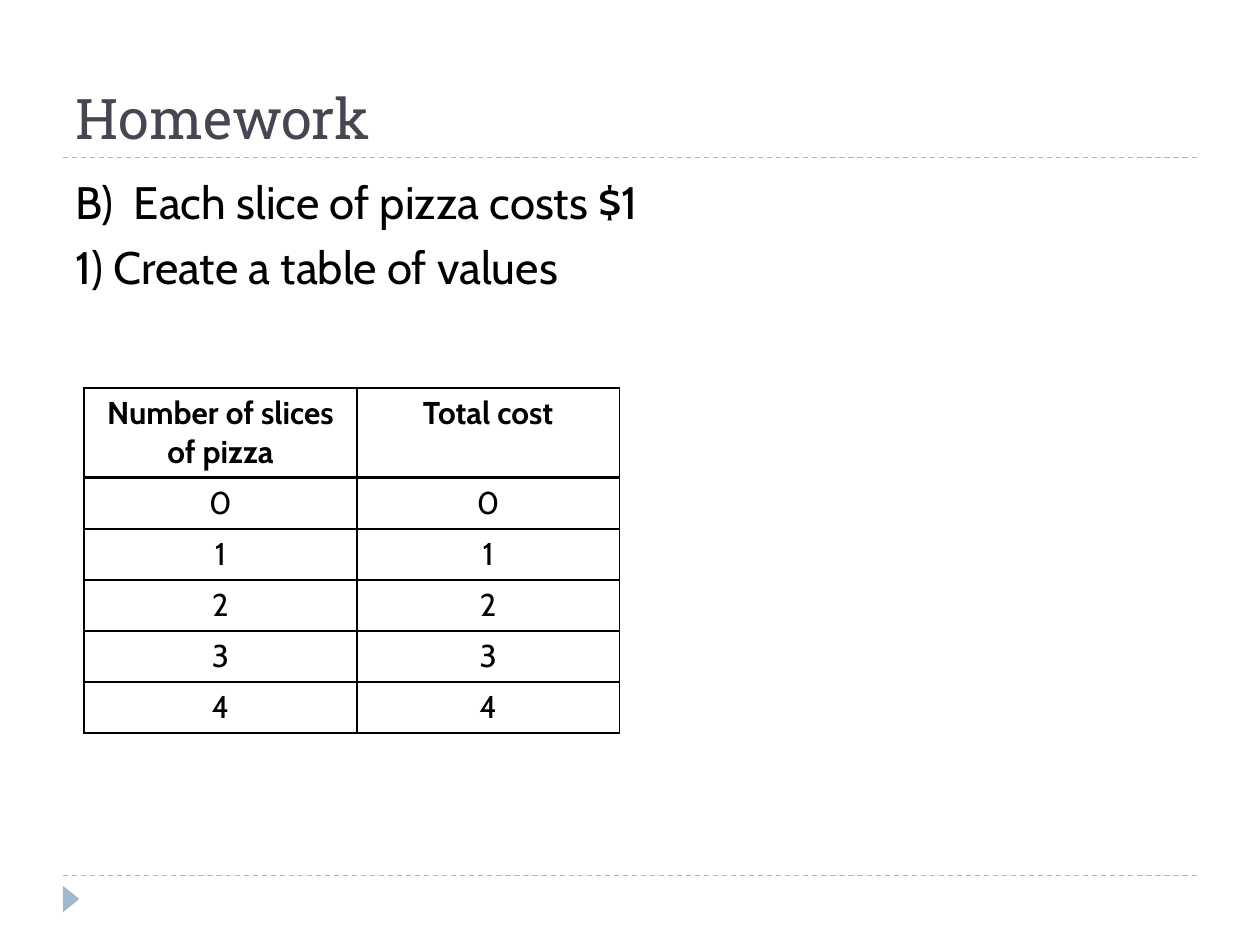
from dataclasses import dataclass

from lxml.etree import SubElement
from pptx import Presentation
from pptx.dml.color import RGBColor
from pptx.enum.dml import MSO_LINE_DASH_STYLE as Dash
from pptx.enum.shapes import MSO_CONNECTOR as Connector, MSO_SHAPE as Shape
from pptx.enum.text import MSO_ANCHOR as Anchor, MSO_AUTO_SIZE as AutoSize, PP_ALIGN as Align
from pptx.oxml import parse_xml
from pptx.oxml.ns import nsdecls, qn
from pptx.util import Pt


@dataclass(frozen=True)
class Theme:
    """Colours, fonts and type sizes of the slide."""

    ink: str = "000000"
    heading: str = "464653"
    accent: str = "9FB8CD"
    title_font: str = "Roboto Slab"
    body_font: str = "Cabin"
    title_size: float = 32
    body_size: float = 26
    table_size: float = 18


class SlideBuilder:
    """Draws styled elements on the current slide."""

    def __init__(self, slide, theme):
        self.slide = slide
        self.theme = theme

    def place(self, shape, left, top, width, height):
        """Move and size a shape, in points."""
        shape.left, shape.top = Pt(left), Pt(top)
        shape.width, shape.height = Pt(width), Pt(height)

    def style(self, paragraph, font, size, color, bold=False):
        """Format every run of a paragraph."""
        for run in paragraph.runs:
            run.font.name = font
            run.font.size = Pt(size)
            run.font.bold = bold
            run.font.color.rgb = RGBColor.from_string(color)

    def rule(self, left, right, top):
        """Draw a dashed horizontal rule."""
        line = self.slide.shapes.add_connector(
            Connector.STRAIGHT, Pt(left), Pt(top), Pt(right), Pt(top))
        line.line.color.rgb = RGBColor.from_string(self.theme.accent)
        line.line.width = Pt(0.75)
        line.line.dash_style = Dash.DASH
        SubElement(line._element.spPr, qn("a:effectLst"))

    def marker(self, *box):
        """Draw a triangle that points right."""
        shape = self.slide.shapes.add_shape(Shape.ISOSCELES_TRIANGLE, *map(Pt, box))
        shape.rotation = 90
        shape.shadow.inherit = False
        shape.fill.solid()
        shape.fill.fore_color.rgb = RGBColor.from_string(self.theme.accent)
        shape.line.fill.background()

    def title(self, text, *box):
        """Fill the title placeholder."""
        shape = self.slide.shapes.title
        self.place(shape, *box)
        frame = shape.text_frame
        frame.text = text
        frame.auto_size = AutoSize.NONE
        frame.vertical_anchor = Anchor.BOTTOM
        paragraph = frame.paragraphs[0]
        paragraph.alignment = Align.LEFT
        self.style(paragraph, self.theme.title_font, self.theme.title_size, self.theme.heading)

    def body(self, lines, *box):
        """Fill the body placeholder with unbulleted lines."""
        shape = self.slide.placeholders[1]
        self.place(shape, *box)
        frame = shape.text_frame
        frame.text = "\n".join(lines)
        frame.auto_size = AutoSize.NONE
        for paragraph in frame.paragraphs:
            paragraph.space_before = Pt(6)
            properties = paragraph._p.get_or_add_pPr()
            properties.set("marL", "0")
            properties.set("indent", "0")
            SubElement(properties, qn("a:buNone"))
            self.style(paragraph, self.theme.body_font, self.theme.body_size, self.theme.ink)

    def borders(self, cell, top, bottom):
        """Give a cell solid borders; the sides are one point wide."""
        properties = cell._tc.get_or_add_tcPr()
        sides = {"lnL": 1, "lnR": 1, "lnT": top, "lnB": bottom}
        for index, (side, width) in enumerate(sides.items()):
            properties.insert(index, parse_xml(
                f'<a:{side} {nsdecls("a")} w="{Pt(width)}"><a:solidFill>'
                f'<a:srgbClr val="{self.theme.ink}"/></a:solidFill></a:{side}>'))

    def table(self, rows, left, top, column_widths, header_height, row_height):
        """Draw a bordered table with a bold header row."""
        heights = [header_height] + [row_height] * (len(rows) - 1)
        table = self.slide.shapes.add_table(
            len(rows), len(column_widths), Pt(left), Pt(top),
            Pt(sum(column_widths)), Pt(sum(heights))).table
        table.first_row = table.horz_banding = False
        for column, width in zip(table.columns, column_widths):
            column.width = Pt(width)
        for index, (row, values) in enumerate(zip(table.rows, rows)):
            row.height = Pt(heights[index])
            for cell, value in zip(row.cells, values):
                cell.text_frame.text = str(value)
                cell.fill.background()
                self.borders(cell, 2 if index == 1 else 1, 2 if index == 0 else 1)
                paragraph = cell.text_frame.paragraphs[0]
                paragraph.alignment = Align.CENTER
                self.style(paragraph, self.theme.body_font, self.theme.table_size,
                           self.theme.ink, bold=index == 0)


def main():
    """Build the homework slide."""
    presentation = Presentation()
    presentation.slide_width, presentation.slide_height = Pt(720), Pt(540)
    slide = presentation.slides.add_slide(presentation.slide_layouts[1])
    builder = SlideBuilder(slide, Theme())
    for top in (500.4, 90):
        builder.rule(36, 684, top)
    builder.marker(33.1, 509, 15.1, 9.4)
    builder.title("Homework", 36, 12.2, 648, 77.8)
    builder.body(["B)  Each slice of pizza costs $1", "1) Create a table of values"],
                 36, 95.8, 648, 388.8)
    rows = [("Number of slices of pizza", "Total cost")]
    rows += [(slices, slices) for slices in range(5)]
    builder.table(rows, 48, 221.8, (156, 150), 51.2, 29.2)
    presentation.save("out.pptx")


if __name__ == "__main__":
    main()
